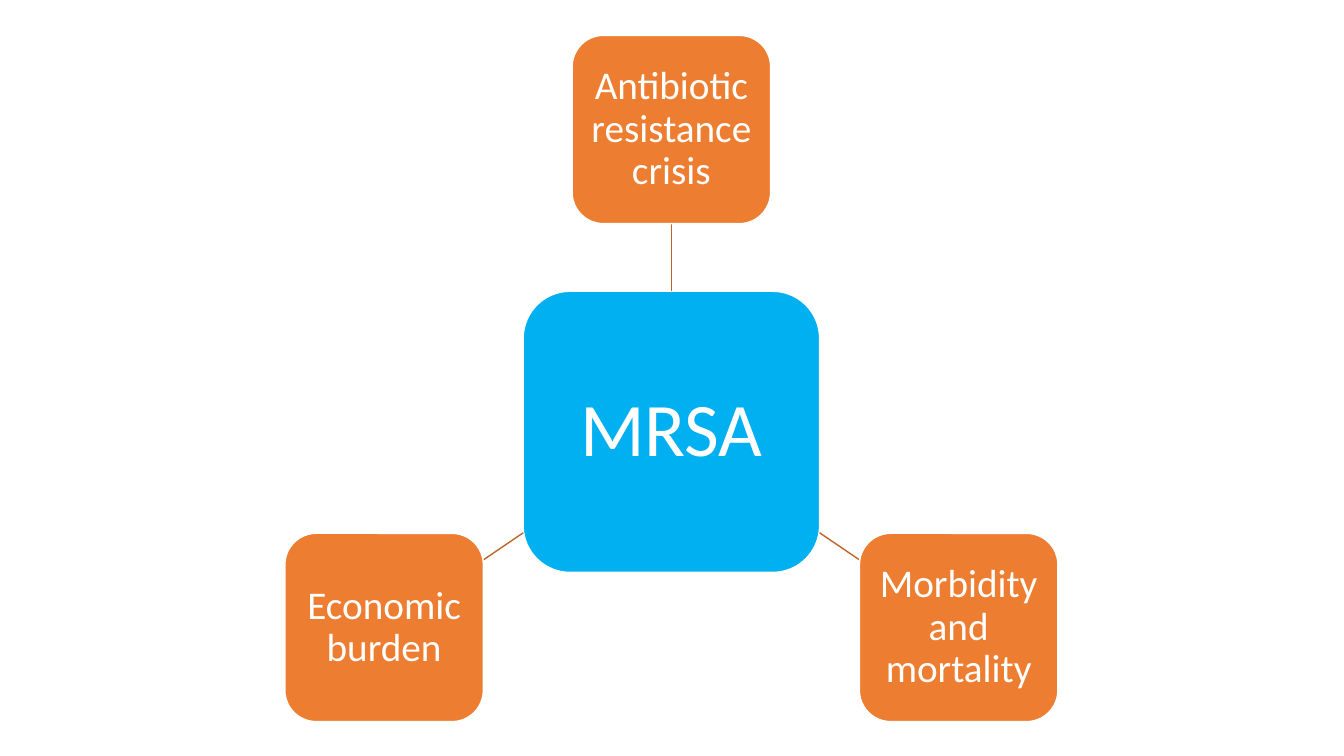
"""Build a hub-and-spoke slide on the burdens of MRSA."""
from lxml import etree
from pptx import Presentation
from pptx.dml.color import RGBColor
from pptx.enum.shapes import MSO_CONNECTOR, MSO_SHAPE
from pptx.enum.text import MSO_ANCHOR, PP_ALIGN
from pptx.oxml.ns import qn
from pptx.util import Pt

ROUNDED = MSO_SHAPE.ROUNDED_RECTANGLE
STRAIGHT = MSO_CONNECTOR.STRAIGHT
MIDDLE = MSO_ANCHOR.MIDDLE
CENTER = PP_ALIGN.CENTER
TOP_SIDE, BOTTOM_SIDE = 0, 2

HUB = "MRSA"
BURDENS = [
    ("Antibiotic resistance crisis", (0, -216)),
    ("Morbidity and mortality", (205.2, 139.7)),
    ("Economic burden", (-205.2, 139.7)),
]
HUB_CENTER = (479.6, 308.5)
HUB_SIZE = (211.7, 200.8)
BURDEN_SIZE = (141.8, 134.5)
FONT = "Calibri"
WHITE, BLUE, ORANGE, BROWN = "FFFFFF", "00B0F0", "ED7D31", "BE6427"


def color(hex_code):
    return RGBColor.from_string(hex_code)


def add_node(slide, label, center, size, fill, font_size, inset):
    (x, y), (width, height) = center, size
    node = slide.shapes.add_shape(
        ROUNDED, Pt(x - width / 2), Pt(y - height / 2), Pt(width), Pt(height))
    node.shadow.inherit = False
    node.fill.solid()
    node.fill.fore_color.rgb = color(fill)
    node.line.color.rgb = color(WHITE)
    node.line.width = Pt(1)
    frame = node.text_frame
    frame.text = label
    frame.word_wrap = True
    frame.vertical_anchor = MIDDLE
    frame.margin_left = frame.margin_right = Pt(inset)
    frame.margin_top = frame.margin_bottom = Pt(inset)
    paragraph = frame.paragraphs[0]
    paragraph.alignment = CENTER
    paragraph.line_spacing = 0.9
    font = paragraph.runs[0].font
    font.name, font.size = FONT, Pt(font_size)
    font.color.rgb = color(WHITE)
    return node


def edge_share(offset, size):
    """Return the share of the offset that lies inside a centred box."""
    return min(side / 2 / abs(step) for step, side in zip(offset, size) if step)


def add_spoke(slide, offset):
    shares = (edge_share(offset, HUB_SIZE), 1 - edge_share(offset, BURDEN_SIZE))
    ends = [Pt(middle + step * share)
            for share in shares for middle, step in zip(HUB_CENTER, offset)]
    spoke = slide.shapes.add_connector(STRAIGHT, *ends)
    spoke.line.color.rgb = color(BROWN)
    spoke.line.width = Pt(1)
    etree.SubElement(spoke._element.spPr, qn("a:effectLst"))
    return spoke


def main():
    deck = Presentation()
    deck.slide_width, deck.slide_height = Pt(960), Pt(540)
    slide = deck.slides.add_slide(deck.slide_layouts[6])
    hub = add_node(slide, HUB, HUB_CENTER, HUB_SIZE, BLUE, 54, 11)
    for label, offset in BURDENS:
        spoke = add_spoke(slide, offset)
        center = [middle + step for middle, step in zip(HUB_CENTER, offset)]
        burden = add_node(slide, label, center, BURDEN_SIZE, ORANGE, 28, 6)
        if offset[0] == 0:
            spoke.begin_connect(hub, TOP_SIDE)
            spoke.end_connect(burden, BOTTOM_SIDE)
    deck.save("out.pptx")


if __name__ == "__main__":
    main()
